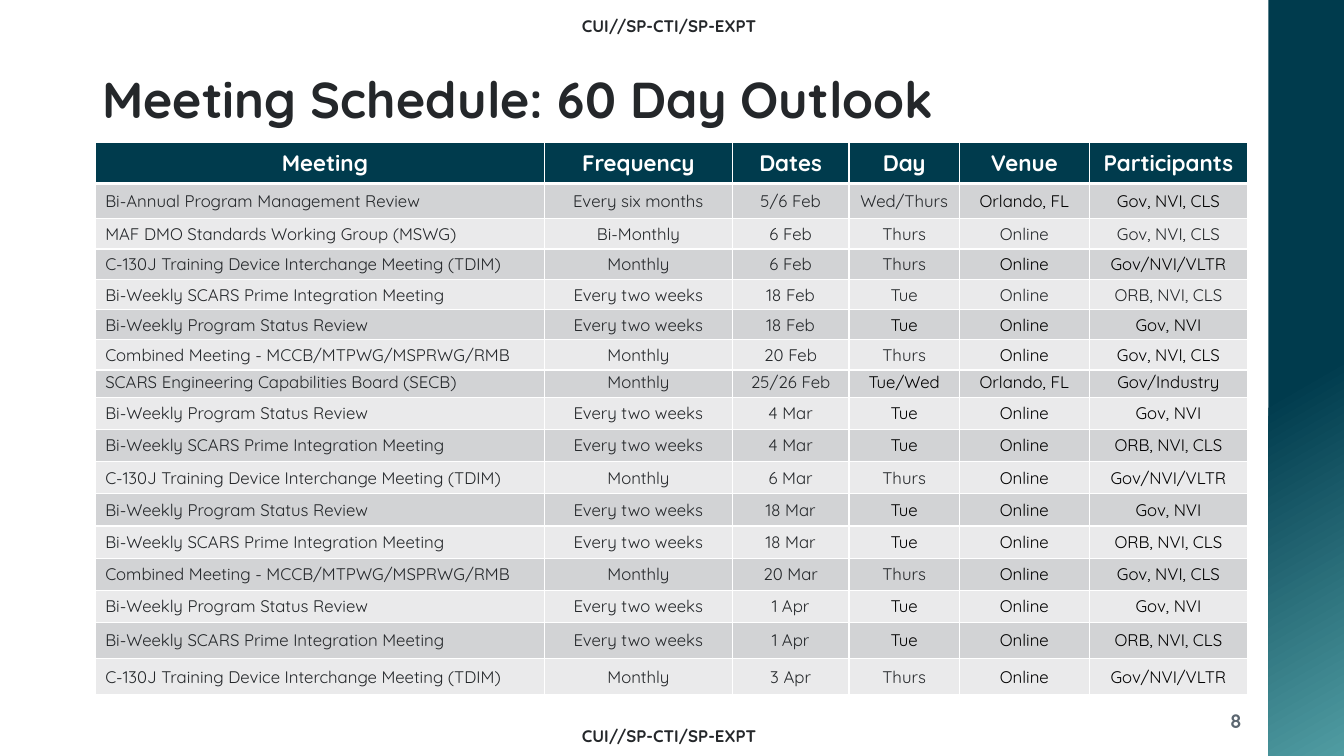
from pptx import Presentation
from pptx.dml.color import RGBColor
from pptx.enum.shapes import MSO_SHAPE
from pptx.enum.text import MSO_ANCHOR, MSO_AUTO_SIZE, PP_ALIGN
from pptx.oxml.ns import qn
from pptx.util import Pt
from lxml import etree

LEFT, CENTER, RIGHT = PP_ALIGN.LEFT, PP_ALIGN.CENTER, PP_ALIGN.RIGHT
TOP, MIDDLE, BOTTOM = MSO_ANCHOR.TOP, MSO_ANCHOR.MIDDLE, MSO_ANCHOR.BOTTOM
RECTANGLE = MSO_SHAPE.RECTANGLE
NO_AUTOFIT = MSO_AUTO_SIZE.NONE

FONT = "Quicksand"
INK, BLACK, WHITE, GRAY = "24272A", "000000", "FFFFFF", "5B6670"
NAVY, TEAL = "003B4D", "509CA2"
BANDS = ["D2D3D5", "EAEAEB"]
MARKING = "CUI//SP-CTI/SP-EXPT"

HEADERS = ["Meeting", "Frequency", "Dates", "Day", "Venue", "Participants"]
COLUMN_WIDTHS = [321, 134, 83.5, 78.8, 92.9, 113]
HEADER_HEIGHT = 29.5
HEADER_MARGINS = (0.72, 0.72, 0.72, 0)
CELL_MARGINS = (7.2, 3.6, 7.2, 3.6)
TIGHT_MARGINS = (7.2, 1.44, 1.44, 3.6)

MEETINGS = {
    "review": ("Bi-Annual Program Management Review", "Every six months",
               "Wed/Thurs", "Orlando, FL", "Gov, NVI, CLS"),
    "standards": ("MAF DMO Standards Working Group (MSWG)", "Bi-Monthly",
                  "Thurs", "Online", "Gov, NVI, CLS"),
    "device": ("C-130J Training Device Interchange Meeting (TDIM)", "Monthly",
               "Thurs", "Online", "Gov/NVI/VLTR"),
    "prime": ("Bi-Weekly SCARS Prime Integration Meeting", "Every two weeks",
              "Tue", "Online", "ORB, NVI, CLS"),
    "status": ("Bi-Weekly Program Status Review", "Every two weeks",
               "Tue", "Online", "Gov, NVI"),
    "combined": ("Combined Meeting - MCCB/MTPWG/MSPRWG/RMB", "Monthly",
                 "Thurs", "Online", "Gov, NVI, CLS"),
    "board": ("SCARS Engineering Capabilities Board (SECB)", "Monthly",
              "Tue/Wed", "Orlando, FL", "Gov/Industry"),
}
SCHEDULE = [
    ("review", "5/6 Feb", 25.2), ("standards", "6 Feb", 20.9),
    ("device", "6 Feb", 19.4), ("prime", "18 Feb", 19.4),
    ("status", "18 Feb", 19.4), ("combined", "20 Feb", 19.4),
    ("board", "25/26 Feb", 19.4), ("status", "4 Mar", 23),
    ("prime", "4 Mar", 23), ("device", "6 Mar", 23),
    ("status", "18 Mar", 23), ("prime", "18 Mar", 23),
    ("combined", "20 Mar", 23), ("status", "1 Apr", 23),
    ("prime", "1 Apr", 25.9), ("device", "3 Apr", 25.9),
]
ALL_INK = [("standards", "6 Feb"), ("prime", "18 Feb")]


def color(code):
    return RGBColor.from_string(code)


class ScheduleSlide:
    def __init__(self, deck):
        self.page = deck.slides.add_slide(deck.slide_layouts[5])

    def add_text(self, frame, text, size, code, bold=True, align=LEFT, anchor=TOP):
        frame.word_wrap = True
        frame.vertical_anchor = anchor
        para = frame.paragraphs[0]
        para.alignment = align
        span = para.add_run()
        span.text = text
        span.font.name = FONT
        span.font.size = Pt(size)
        span.font.bold = bold
        span.font.color.rgb = color(code)
        return para

    def title(self, text, left, top, width, height):
        box = self.page.shapes.title
        box.left, box.top, box.width, box.height = map(Pt, (left, top, width, height))
        para = self.add_text(box.text_frame, text, 36, INK, anchor=BOTTOM)
        para.line_spacing = 0.9
        box.text_frame.auto_size = NO_AUTOFIT

    def label(self, text, left, top, width, height, size, code, align, anchor=TOP):
        box = self.page.shapes.add_textbox(*map(Pt, (left, top, width, height)))
        self.add_text(box.text_frame, text, size, code, align=align, anchor=anchor)

    def side_band(self, left, top, width, height):
        band = self.page.shapes.add_shape(RECTANGLE, *map(Pt, (left, top, width, height)))
        band.shadow.inherit = False
        band.line.fill.background()
        band.fill.gradient()
        band.fill.gradient_angle = 300
        for stop, position, code in zip(band.fill.gradient_stops, (0.5, 1), (NAVY, TEAL)):
            stop.position = position
            stop.color.rgb = color(code)

    def borders(self, cell, bottom):
        properties = cell._tc.get_or_add_tcPr()
        for side, width in (("L", 1), ("R", 1), ("T", 1), ("B", bottom)):
            line = etree.SubElement(properties, qn(f"a:ln{side}"), w=str(Pt(width)))
            fill = etree.SubElement(line, qn("a:solidFill"))
            etree.SubElement(fill, qn("a:srgbClr"), val=WHITE)

    def cell(self, cell, text, fill, margins, size, code, bold, align, bottom=1):
        self.borders(cell, bottom)
        cell.fill.solid()
        cell.fill.fore_color.rgb = color(fill)
        (cell.margin_left, cell.margin_top,
         cell.margin_right, cell.margin_bottom) = map(Pt, margins)
        self.add_text(cell.text_frame, text, size, code, bold, align)
        cell.vertical_anchor = MIDDLE

    def schedule(self, left, top):
        heights = [HEADER_HEIGHT] + [height for _, _, height in SCHEDULE]
        table = self.page.shapes.add_table(
            len(heights), len(HEADERS), Pt(left), Pt(top),
            Pt(sum(COLUMN_WIDTHS)), Pt(sum(heights))).table
        for column, width in zip(table.columns, COLUMN_WIDTHS):
            column.width = Pt(width)
        for row, height in zip(table.rows, heights):
            row.height = Pt(height)
        for column, text in enumerate(HEADERS):
            margins = HEADER_MARGINS if column else (7.92, *HEADER_MARGINS[1:])
            self.cell(table.cell(0, column), text, NAVY, margins,
                      16, WHITE, True, CENTER, bottom=3)
        for row, (key, date, _) in enumerate(SCHEDULE, 1):
            name, frequency, day, venue, people = MEETINGS[key]
            first_black = 3 if day.startswith("Tue") else 4
            if (key, date) in ALL_INK:
                first_black = len(HEADERS)
            for column, text in enumerate((name, frequency, date, day, venue, people)):
                margins = TIGHT_MARGINS if key == "board" else CELL_MARGINS
                if key == "board" and column:
                    margins = (1.44, *TIGHT_MARGINS[1:])
                self.cell(table.cell(row, column), text, BANDS[(row - 1) % 2], margins,
                          12, BLACK if column >= first_black else INK, False,
                          CENTER if column else LEFT)


def main():
    deck = Presentation()
    deck.slide_width, deck.slide_height = Pt(960), Pt(540)
    slide = ScheduleSlide(deck)
    slide.side_band(906, 0, 54, 540)
    for top in (8, 515):
        slide.label(MARKING, 142, top, 672, 17, 12, INK, CENTER)
    slide.label("8", 828, 500, 66, 29, 14, GRAY, RIGHT, MIDDLE)
    slide.title("Meeting Schedule: 60 Day Outlook", 66, 27, 828, 69)
    slide.schedule(68, 101.5)
    deck.save("out.pptx")


if __name__ == "__main__":
    main()
